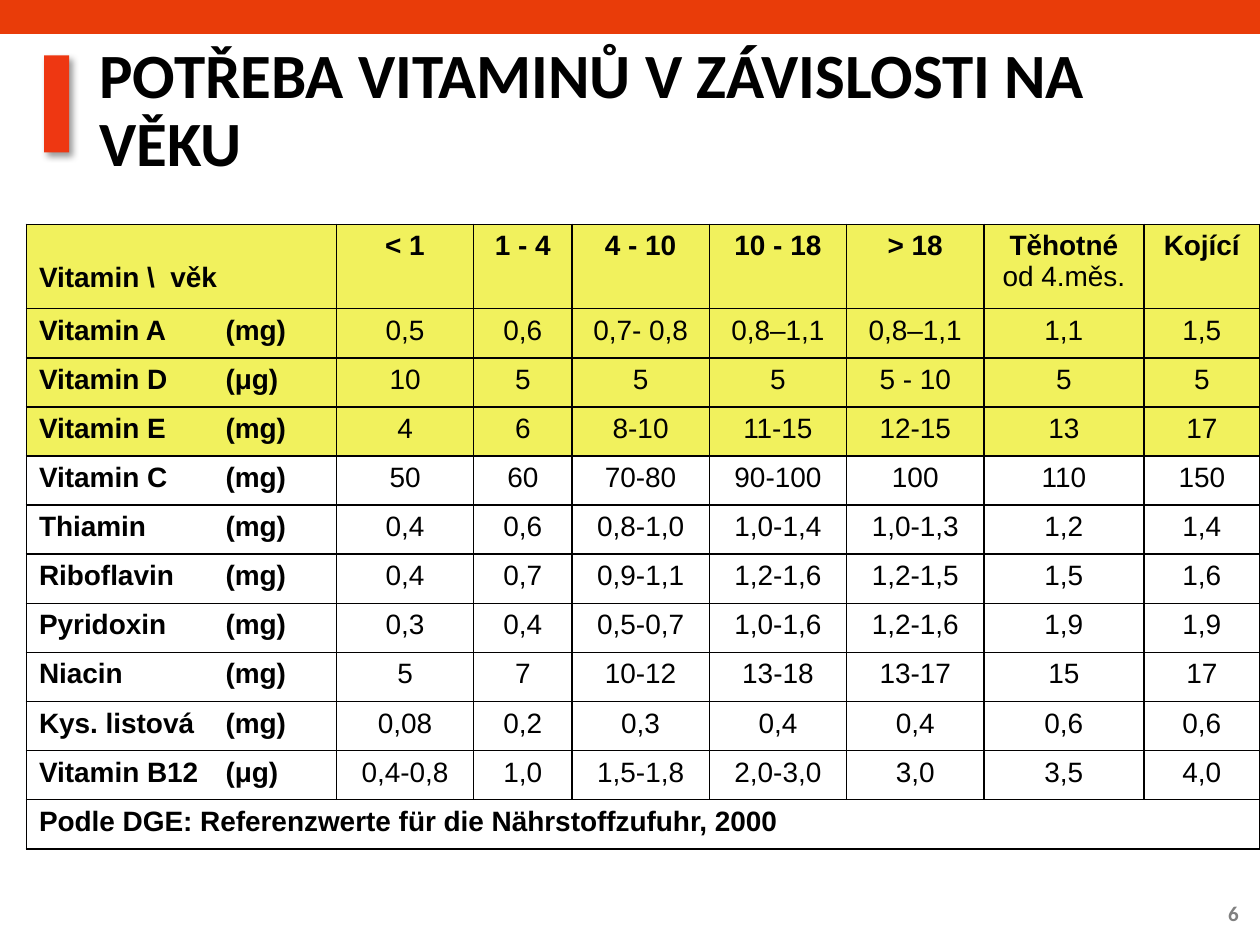
from lxml.etree import SubElement
from pptx import Presentation
from pptx.dml.color import RGBColor
from pptx.enum.shapes import MSO_SHAPE as Shape
from pptx.enum.text import MSO_ANCHOR as Anchor, PP_ALIGN as Align
from pptx.oxml.ns import qn
from pptx.util import Inches, Pt

WIDTH, HEIGHT = 10, 7.5
BLACK, YELLOW = "000000", "F1F15D"
COLUMNS = [2.46, 1.09, 0.78, 1.09, 1.09, 1.09, 1.27, 0.92]
HEADER_ROW, BODY_ROW = 0.67, 0.39
UNIT_TAB = 1.48
YELLOW_ROWS = 4

CORNER = "Vitamin \\  věk"
AGES = ["< 1", "1 - 4", "4 - 10", "10 - 18", "> 18", "Těhotné", "Kojící"]
PREGNANT_NOTE = "od 4.měs."
VITAMINS = [
    ("Vitamin A", "mg", "0,5|0,6|0,7- 0,8|0,8–1,1|0,8–1,1|1,1|1,5"),
    ("Vitamin D", "μg", "10|5|5|5|5 - 10|5|5"),
    ("Vitamin E", "mg", "4|6|8-10|11-15|12-15|13|17"),
    ("Vitamin C", "mg", "50|60|70-80|90-100|100|110|150"),
    ("Thiamin", "mg", "0,4|0,6|0,8-1,0|1,0-1,4|1,0-1,3|1,2|1,4"),
    ("Riboflavin", "mg", "0,4|0,7|0,9-1,1|1,2-1,6|1,2-1,5|1,5|1,6"),
    ("Pyridoxin", "mg", "0,3|0,4|0,5-0,7|1,0-1,6|1,2-1,6|1,9|1,9"),
    ("Niacin", "mg", "5|7|10-12|13-18|13-17|15|17"),
    ("Kys. listová", "mg", "0,08|0,2|0,3|0,4|0,4|0,6|0,6"),
    ("Vitamin B12", "μg", "0,4-0,8|1,0|1,5-1,8|2,0-3,0|3,0|3,5|4,0"),
]
SOURCE = "Podle DGE: Referenzwerte für die Nährstoffzufuhr, 2000"


def color(value):
    return RGBColor.from_string(value)


def write(para, text, size=16, font="Arial", ink=BLACK, bold=True, align=Align.LEFT):
    para.alignment = align
    span = para.add_run()
    span.text = text
    span.font.size, span.font.name, span.font.bold = Pt(size), font, bold
    span.font.color.rgb = color(ink)


def add_bar(page, box, fill):
    bar = page.shapes.add_shape(Shape.RECTANGLE, *map(Inches, box))
    bar.shadow.inherit = False
    bar.fill.solid()
    bar.fill.fore_color.rgb = color(fill)
    bar.line.fill.background()
    return bar


def add_drop_shadow(shape):
    effects = shape._element.spPr.find(qn("a:effectLst"))
    shadow = SubElement(effects, qn("a:outerShdw"), blurRad=str(Pt(4)),
                        dist=str(Pt(3)), dir=str(45 * 60000), rotWithShape="0")
    tint = SubElement(shadow, qn("a:srgbClr"), val=BLACK)
    SubElement(tint, qn("a:alpha"), val="40000")


def add_text(page, box, text, spacing=None, **style):
    frame = page.shapes.add_textbox(*map(Inches, box)).text_frame
    frame.word_wrap = True
    frame.vertical_anchor = Anchor.MIDDLE
    para = frame.paragraphs[0]
    para.line_spacing = spacing
    write(para, text, font="Calibri", **style)


def style_cell(cell, fill):
    props = cell._tc.get_or_add_tcPr()
    for side in ("lnL", "lnR", "lnT", "lnB"):
        line = SubElement(props, qn(f"a:{side}"), w=str(Pt(1)))
        SubElement(SubElement(line, qn("a:solidFill")), qn("a:srgbClr"), val="010000")
    if fill:
        cell.fill.solid()
        cell.fill.fore_color.rgb = color(fill)
    else:
        cell.fill.background()


def write_header(cells):
    cells[0].margin_top = Inches(0.3)
    write(cells[0].text_frame.paragraphs[0], CORNER)
    for cell, age in zip(cells[1:], AGES):
        write(cell.text_frame.paragraphs[0], age, align=Align.CENTER)
    pregnant = cells[1 + AGES.index("Těhotné")].text_frame
    write(pregnant.add_paragraph(), PREGNANT_NOTE, bold=False, align=Align.CENTER)


def write_vitamin(cells, name, unit, values):
    para = cells[0].text_frame.paragraphs[0]
    tabs = SubElement(para._p.get_or_add_pPr(), qn("a:tabLst"))
    SubElement(tabs, qn("a:tab"), pos=str(Inches(UNIT_TAB)), algn="l")
    write(para, f"{name}\t({unit})")
    for cell, value in zip(cells[1:], values.split("|")):
        write(cell.text_frame.paragraphs[0], value, bold=False, align=Align.CENTER)


def add_vitamin_table(page, left, top):
    heights = [HEADER_ROW] + [BODY_ROW] * (len(VITAMINS) + 1)
    box = left, top, sum(COLUMNS), sum(heights)
    table = page.shapes.add_table(len(heights), len(COLUMNS), *map(Inches, box)).table
    table.first_row = table.horz_banding = False
    for column, width in zip(table.columns, COLUMNS):
        column.width = Inches(width)
    for index, (row, height) in enumerate(zip(table.rows, heights)):
        row.height = Inches(height)
        for cell in row.cells:
            style_cell(cell, YELLOW if index < YELLOW_ROWS else None)
    header, *body, footer = [list(row.cells) for row in table.rows]
    write_header(header)
    for cells, vitamin in zip(body, VITAMINS):
        write_vitamin(cells, *vitamin)
    footer[0].merge(footer[-1])
    write(footer[0].text_frame.paragraphs[0], SOURCE)


def main():
    deck = Presentation()
    deck.slide_width, deck.slide_height = Inches(WIDTH), Inches(HEIGHT)
    page = deck.slides.add_slide(deck.slide_layouts[6])
    add_bar(page, (0, 0, WIDTH, 0.27), "E93C09")
    add_drop_shadow(add_bar(page, (0.35, 0.44, 0.2, 0.77), "EE3712"))
    add_text(page, (9.25, 7.05, 0.68, 0.4), "6", size=12, ink="808080", align=Align.RIGHT)
    add_vitamin_table(page, WIDTH - sum(COLUMNS), 1.78)
    add_text(page, (0.69, 0.4, 9.05, 0.98), "POTŘEBA VITAMINŮ V ZÁVISLOSTI NA VĚKU",
             spacing=0.9, size=36)
    deck.save("out.pptx")


if __name__ == "__main__":
    main()
